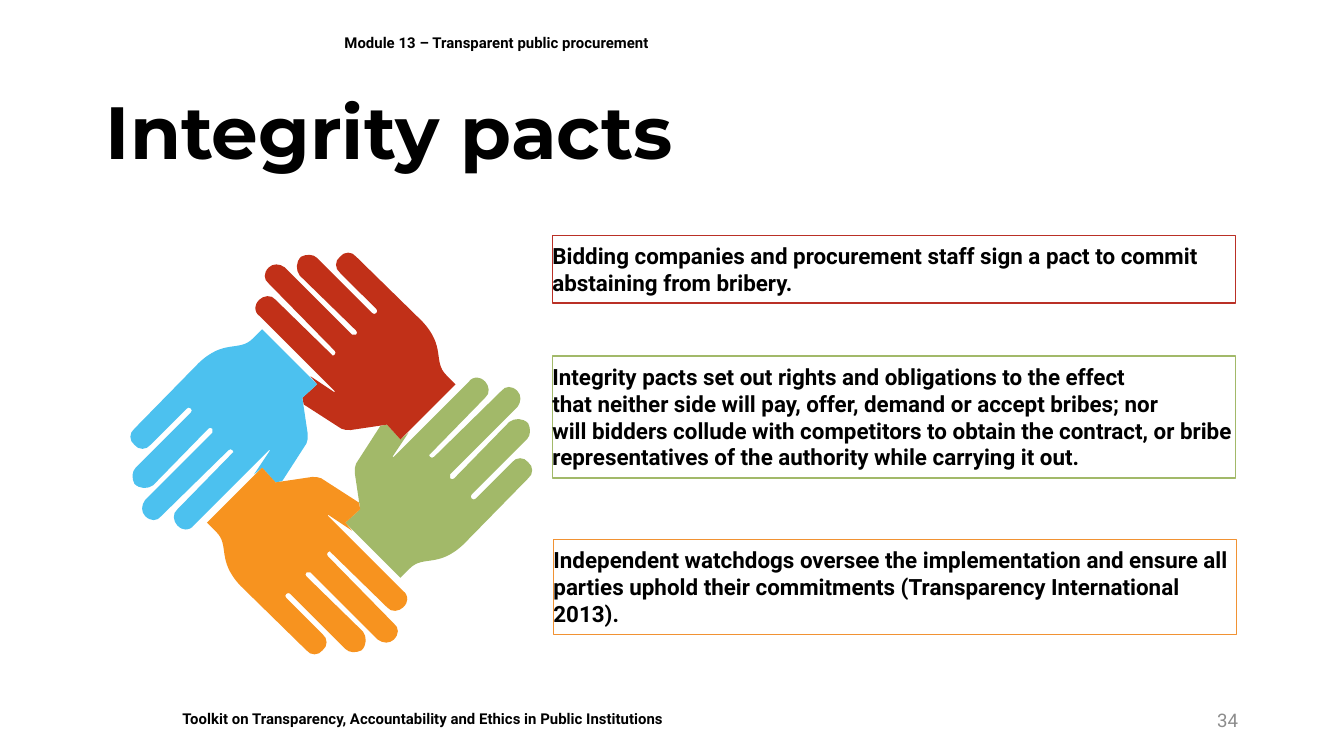
import math

from lxml import etree
from pptx import Presentation
from pptx import util as u
from pptx.dml.color import RGBColor
from pptx.enum import shapes, text
from pptx.oxml import ns


def color(value):
    return RGBColor.from_string(value)


def add_box(page, place, words, size, font="Roboto", ink="000000", bold=True,
            fill=None, edge=None, side=0.25, anchor="TOP", align="LEFT"):
    box = page.shapes.add_shape(shapes.MSO_SHAPE.RECTANGLE, *map(u.Cm, place))
    box.shadow.inherit = False
    if fill:
        box.fill.solid()
        box.fill.fore_color.rgb = color(fill)
    else:
        box.fill.background()
    if edge:
        box.line.color.rgb = color(edge)
        box.line.width = u.Pt(0.75)
    else:
        box.line.fill.background()
    frame = box.text_frame
    frame.word_wrap = True
    frame.margin_left = frame.margin_right = u.Cm(side)
    frame.margin_top = frame.margin_bottom = u.Cm(0.13)
    frame.vertical_anchor = text.MSO_ANCHOR[anchor]
    frame.text = words
    para = frame.paragraphs[0]
    para.alignment = text.PP_ALIGN[align]
    span = para.runs[0]
    span.font.name = font
    span.font.size = u.Pt(size)
    span.font.bold = bold
    span.font.color.rgb = color(ink)
    return para


deck = Presentation()
deck.slide_width = u.Cm(25.4)
deck.slide_height = u.Cm(14.29)
page = deck.slides.add_slide(deck.slide_layouts[6])

add_box(page, (3.2, 13.28, 18.21, 0.61),
        "Toolkit on Transparency, Accountability and Ethics in Public Institutions",
        8, fill="FFFFFF")
add_box(page, (6.26, 0.25, 17.4, 1.12), "Module 13 – Transparent public procurement",
        8, anchor="MIDDLE")
add_box(page, (17.93, 13.24, 5.72, 0.76), "34", 10, ink="8C8C8C", bold=False,
        anchor="MIDDLE", align="RIGHT")
title = add_box(page, (1.75, 1.62, 21.89, 1.9), "Integrity pacts", 39.6,
                font="Montserrat", anchor="MIDDLE")
title.line_spacing = 0.9

unit = u.Cm(0.0254)
center_x, center_y = 246.5, 337.5
hand = [
    (355, 281), (357, 281, 359, 282, 361, 284), (364, 287, 365, 293, 361, 296),
    (320, 338), (319, 338, 319, 339, 320, 340), (321, 341, 322, 341, 323, 340),
    (373, 291), (376, 287, 381, 287, 385, 291), (388, 294, 388, 299, 385, 303),
    (335, 353), (335, 354, 335, 355, 335, 356), (336, 357, 337, 357, 338, 356),
    (379, 314), (383, 311, 389, 311, 393, 315), (395, 319, 395, 324, 392, 327),
    (351, 368), (350, 369, 350, 370, 351, 371), (352, 372, 353, 372, 354, 371),
    (381, 344), (384, 340, 390, 340, 393, 344), (397, 347, 397, 353, 393, 356),
    (345, 405), (326, 423, 315, 413, 305, 423), (298, 430), (257, 389),
    (268, 379), (264, 352), (264, 349, 264, 347, 265, 345), (283, 317),
    (288, 316), (298, 327), (304, 322), (292, 340), (292, 340, 293, 340, 293, 340),
    (349, 284), (350, 282, 353, 281, 355, 281),
]
slope = math.sqrt(0.5) * unit
upright = []
for segment in hand:
    pairs = [(x - center_x, y - center_y) for x, y in zip(segment[::2], segment[1::2])]
    upright.append([((x + y) * slope, (y - x) * slope) for x, y in pairs])
ends = [segment[-1] for segment in upright]

for angle, hand_fill in ((45, "A2B969"), (315, "C13018"), (225, "4CC1EF"), (135, "F7931F")):
    builder = page.shapes.build_freeform(*ends[0])
    builder.add_line_segments(ends[1:], close=True)
    shape = builder.convert_to_shape()
    lines = list(shape.element.iter(ns.qn("a:lnTo")))
    for line, segment in zip(lines, upright[1:]):
        if len(segment) == 3:
            line.tag = ns.qn("a:cubicBezTo")
            for index, (x, y) in enumerate(segment[:2]):
                point = etree.Element(ns.qn("a:pt"))
                point.set("x", str(round(x - shape.left)))
                point.set("y", str(round(y - shape.top)))
                line.insert(index, point)
    middle_x = shape.left + shape.width / 2
    middle_y = shape.top + shape.height / 2
    cos, sin = math.cos(math.radians(angle)), math.sin(math.radians(angle))
    shape.left = round(center_x * unit + middle_x * cos - middle_y * sin - shape.width / 2)
    shape.top = round(center_y * unit + middle_x * sin + middle_y * cos - shape.height / 2)
    shape.rotation = angle
    shape.shadow.inherit = False
    shape.fill.solid()
    shape.fill.fore_color.rgb = color(hand_fill)
    shape.line.fill.background()

hard_space = chr(160)
statements = [
    (10.44, 6.73, 2.31, "A2B969",
     f"Integrity pacts set out rights and obligations to the effect that{hard_space}neither "
     f"side will pay, offer, demand or accept bribes; nor will{hard_space}bidders collude with "
     f"competitors to obtain the contract, or{hard_space}bribe representatives of the "
     "authority while carrying it out."),
    (10.46, 10.2, 1.8, "F19233",
     f"Independent watchdogs oversee the implementation and{hard_space}ensure all parties "
     "uphold their commitments (Transparency International 2013)."),
    (10.44, 4.45, 1.28, "BA3026",
     f"Bidding companies and procurement staff sign a pact to{hard_space}commit abstaining "
     "from bribery."),
]
for left, top, height, edge, words in statements:
    add_box(page, (left, top, 12.91, height), words, 12, edge=edge, side=0)

deck.save("out.pptx")
